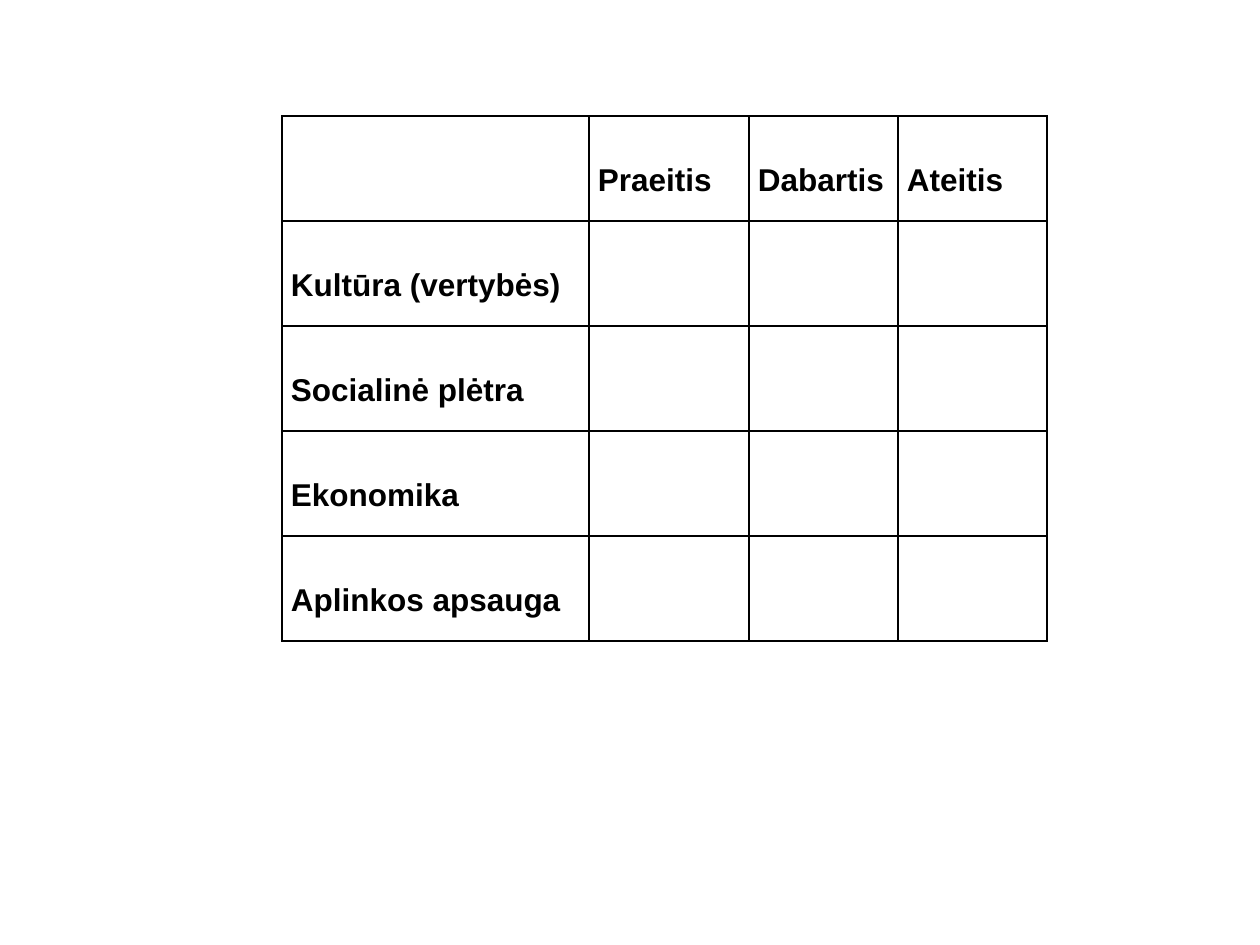
from lxml.etree import SubElement
from pptx import Presentation
from pptx.dml.color import RGBColor
from pptx.enum.text import MSO_ANCHOR as ANCHOR, PP_ALIGN as ALIGN
from pptx.oxml.ns import qn
from pptx.util import Emu, Pt

PX_PER_INCH = 126
BLACK = RGBColor(0, 0, 0)
WHITE = RGBColor(255, 255, 255)
PERIODS = ["Praeitis", "Dabartis", "Ateitis"]
TOPICS = ["Kultūra (vertybės)", "Socialinė plėtra", "Ekonomika", "Aplinkos apsauga"]
COLUMN_WIDTHS = [307, 160, 149, 149]


def px(n):
    """Turn pixels into EMU."""
    return Emu(round(n * 914400 / PX_PER_INCH))


def set_borders(cell, color, width):
    """Draw a solid line on all four sides of a cell."""
    tc_pr = cell._tc.get_or_add_tcPr()
    for i, side in enumerate(("a:lnL", "a:lnR", "a:lnT", "a:lnB")):
        ln = SubElement(tc_pr, qn(side), w=str(width))
        fill = SubElement(ln, qn("a:solidFill"))
        SubElement(fill, qn("a:srgbClr"), val=str(color))
        tc_pr.remove(ln)
        tc_pr.insert(i, ln)


def style_cell(cell, text):
    """Fill, border and label one cell."""
    cell.fill.solid()
    cell.fill.fore_color.rgb = WHITE
    set_borders(cell, BLACK, Pt(1))
    cell.margin_left = cell.margin_right = px(9)
    cell.margin_top, cell.margin_bottom = px(42), 0
    cell.vertical_anchor = ANCHOR.TOP
    cell.text = text
    p = cell.text_frame.paragraphs[0]
    p.alignment = ALIGN.LEFT
    p.line_spacing = 1.15
    p.font.name = "Arial"
    p.font.size = Pt(18)
    p.font.bold = True
    p.font.color.rgb = BLACK


def add_topic_table(slide, left, top, widths, height):
    """Place the grid of topics against periods."""
    rows = [["", *PERIODS]] + [[topic] + [""] * len(PERIODS) for topic in TOPICS]
    frame = slide.shapes.add_table(
        len(rows), len(widths), px(left), px(top), px(sum(widths)), px(height))
    table = frame.table
    table.first_row = table.horz_banding = False
    for column, width in zip(table.columns, widths):
        column.width = px(width)
    for r, labels in enumerate(rows):
        table.rows[r].height = px(height / len(rows))
        for c, label in enumerate(labels):
            style_cell(table.cell(r, c), label)


def main():
    """Build the slide and save it."""
    prs = Presentation()
    prs.slide_width, prs.slide_height = px(1260), px(945)
    slide = prs.slides.add_slide(prs.slide_layouts[6])
    add_topic_table(slide, 282, 116, COLUMN_WIDTHS, 525)
    prs.save("out.pptx")


if __name__ == "__main__":
    main()
